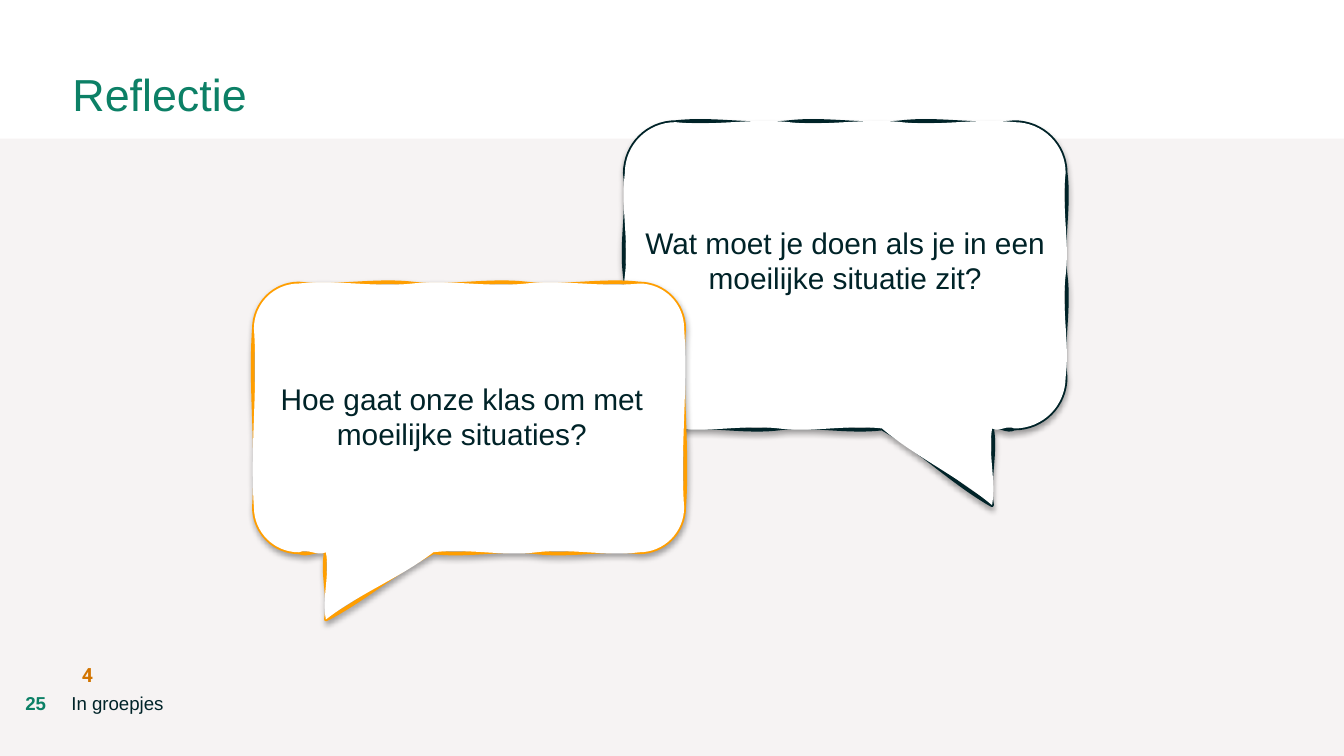
"""Builds the reflection slide with two hand-drawn speech bubbles."""
from dataclasses import dataclass
from math import hypot
from typing import NamedTuple

from lxml.etree import SubElement
from pptx import Presentation
from pptx.dml.color import RGBColor
from pptx.enum.shapes import MSO_SHAPE as Preset
from pptx.enum.text import PP_ALIGN as Align
from pptx.oxml.ns import qn
from pptx.util import Cm, Pt

GREEN, DARK, ORANGE, BROWN = "0C8066", "002328", "FF9E00", "D27400"
WHITE, SAND, BLACK = "FFFFFF", "E3DAD8", "000000"
UNITS_PER_CM = 100
ROUNDNESS = 0.55
SWAY = 0.08
WAVE_LENGTH = 2.5


class Point(NamedTuple):
    x: float
    y: float

    def toward(self, other: "Point", share: float) -> "Point":
        return Point(self.x + share * (other.x - self.x),
                     self.y + share * (other.y - self.y))

    def shifted(self, dx: float, dy: float) -> "Point":
        return Point(self.x + dx, self.y + dy)


Curve = tuple[Point, Point, Point]


@dataclass(frozen=True)
class Box:
    left: float
    top: float
    width: float
    height: float

    def lengths(self) -> list[Cm]:
        return [Cm(v) for v in (self.left, self.top, self.width, self.height)]


@dataclass(frozen=True)
class Bubble:
    body: Box
    edge: str
    tail_on_right: bool
    question: str
    question_box: Box


BUBBLES = (
    Bubble(Box(11.81, 2.31, 8.33, 5.79), DARK, True,
           "Wat moet je doen als je in een moeilijke situatie zit?",
           Box(11.91, 4.24, 8.13, 2.13)),
    Bubble(Box(4.8, 5.36, 8.13, 5.08), ORANGE, False,
           "Hoe gaat onze klas om met moeilijke situaties?",
           Box(4.83, 7.19, 7.8, 3.51)),
)


def paint(color_format, color: str) -> None:
    color_format.rgb = RGBColor.from_string(color)


def add_alpha(color_element, percent: int) -> None:
    SubElement(color_element, qn("a:alpha"), val=str(percent * 1000))


def add_text(shapes, box: Box, text: str, *, size: float, color: str = DARK,
             font: str = "Arial", bold: bool = False, align: Align = Align.LEFT,
             margin: float = 0) -> None:
    frame = shapes.add_textbox(*box.lengths()).text_frame
    frame.word_wrap = True
    frame.margin_left = frame.margin_right = Cm(margin)
    frame.margin_top = frame.margin_bottom = Cm(margin)
    paragraph = frame.paragraphs[0]
    paragraph.alignment = align
    run = paragraph.add_run()
    run.text = text
    run.font.name, run.font.size, run.font.bold = font, Pt(size), bold
    paint(run.font.color, color)


def add_band(shapes, box: Box) -> None:
    band = shapes.add_shape(Preset.RECTANGLE, *box.lengths())
    band.shadow.inherit = False
    band.fill.solid()
    paint(band.fill.fore_color, SAND)
    band.line.fill.background()
    add_alpha(band._element.spPr.find(f"{qn('a:solidFill')}/{qn('a:srgbClr')}"), 30)


def round_corner(start: Point, corner: Point, end: Point) -> list[Curve]:
    return [(start.toward(corner, ROUNDNESS), end.toward(corner, ROUNDNESS), end)]


def wavy_edge(start: Point, end: Point, sway: float) -> list[Curve]:
    dx, dy = end.x - start.x, end.y - start.y
    length = hypot(dx, dy)
    across = Point(-dy / length * sway, dx / length * sway)
    waves = max(1, round(length / WAVE_LENGTH))
    return [
        (start.toward(end, (wave + 1 / 3) / waves).shifted(across.x, across.y),
         start.toward(end, (wave + 2 / 3) / waves).shifted(-across.x, -across.y),
         start.toward(end, (wave + 1) / waves))
        for wave in range(waves)
    ]


def bubble_curves(body: Box, sway: float) -> tuple[Point, list[Curve]]:
    """Goes clockwise round a bubble whose tail is at the lower left."""
    width, height = body.width, body.height
    radius = height / 6
    start = here = Point(radius, 0)
    tail_near, tail_far = width / 6, width * 5 / 12
    route = (
        (None, Point(width - radius, 0)),
        (Point(width, 0), Point(width, radius)),
        (None, Point(width, height - radius)),
        (Point(width, height), Point(width - radius, height)),
        (None, Point(tail_far, height)),
        (None, Point(tail_near, height * 5 / 4)),
        (None, Point(tail_near, height)),
        (None, Point(radius, height)),
        (Point(0, height), Point(0, height - radius)),
        (None, Point(0, radius)),
        (Point(0, 0), start),
    )
    curves = []
    for corner, end in route:
        curves += round_corner(here, corner, end) if corner else wavy_edge(here, end, sway)
        here = end
    return start, curves


def add_path(path_list, bubble: Bubble, sway: float, **visibility: str) -> None:
    body = bubble.body
    path = SubElement(path_list, qn("a:path"), w=str(round(body.width * UNITS_PER_CM)),
                      h=str(round(body.height * UNITS_PER_CM)), **visibility)
    start, curves = bubble_curves(body, sway)
    commands = [("a:moveTo", (start,))] + [("a:cubicBezTo", curve) for curve in curves]
    for tag, points in commands:
        command = SubElement(path, qn(tag))
        for point in points:
            x = body.width - point.x if bubble.tail_on_right else point.x
            SubElement(command, qn("a:pt"), x=str(round(x * UNITS_PER_CM)),
                       y=str(round(point.y * UNITS_PER_CM)))
    SubElement(path, qn("a:close"))


def add_bubble(shapes, bubble: Bubble) -> None:
    """Draws a wavy line below a filling that sways the other way."""
    group = shapes.add_group_shape()
    left, top, width, height = bubble.body.lengths()
    builder = group.shapes.build_freeform(left, top)
    builder.add_line_segments([(left + width, top), (left + width, top + height),
                               (left, top + height)])
    balloon = builder.convert_to_shape()
    balloon.fill.solid()
    paint(balloon.fill.fore_color, WHITE)
    paint(balloon.line.color, bubble.edge)
    balloon.line.width = Pt(2)
    balloon.shadow.inherit = False

    properties = balloon._element.spPr
    path_list = properties.find(f"{qn('a:custGeom')}/{qn('a:pathLst')}")
    path_list.clear()
    add_path(path_list, bubble, SWAY, fill="none")
    add_path(path_list, bubble, -SWAY, stroke="0")
    shadow = SubElement(properties.find(qn("a:effectLst")), qn("a:outerShdw"),
                        blurRad=str(Pt(3.1)), dist=str(Pt(1.8)), dir="5400000",
                        rotWithShape="0")
    add_alpha(SubElement(shadow, qn("a:srgbClr"), val=BLACK), 35)

    add_text(group.shapes, bubble.question_box, bubble.question, size=16,
             align=Align.CENTER)


def main() -> None:
    deck = Presentation()
    deck.slide_width, deck.slide_height = Cm(25.4), Cm(14.29)
    shapes = deck.slides.add_slide(deck.slide_layouts[6]).shapes

    add_band(shapes, Box(-0.23, 2.62, 25.88, 11.86))
    add_text(shapes, Box(0.23, 13.08, 0.89, 0.51), "25", size=10, color=GREEN,
             bold=True, align=Align.CENTER)
    add_text(shapes, Box(1.37, 1.27, 22.81, 1.63), "Reflectie", size=24, color=GREEN)
    add_text(shapes, Box(1.35, 13.08, 10.64, 0.66), "In groepjes", size=10)
    for bubble in BUBBLES:
        add_bubble(shapes, bubble)
    add_text(shapes, Box(1.42, 12.4, 0.38, 0.74), "4", size=10.5, color=BROWN,
             font="Roboto", bold=True, margin=0.13)
    deck.save("out.pptx")


if __name__ == "__main__":
    main()
